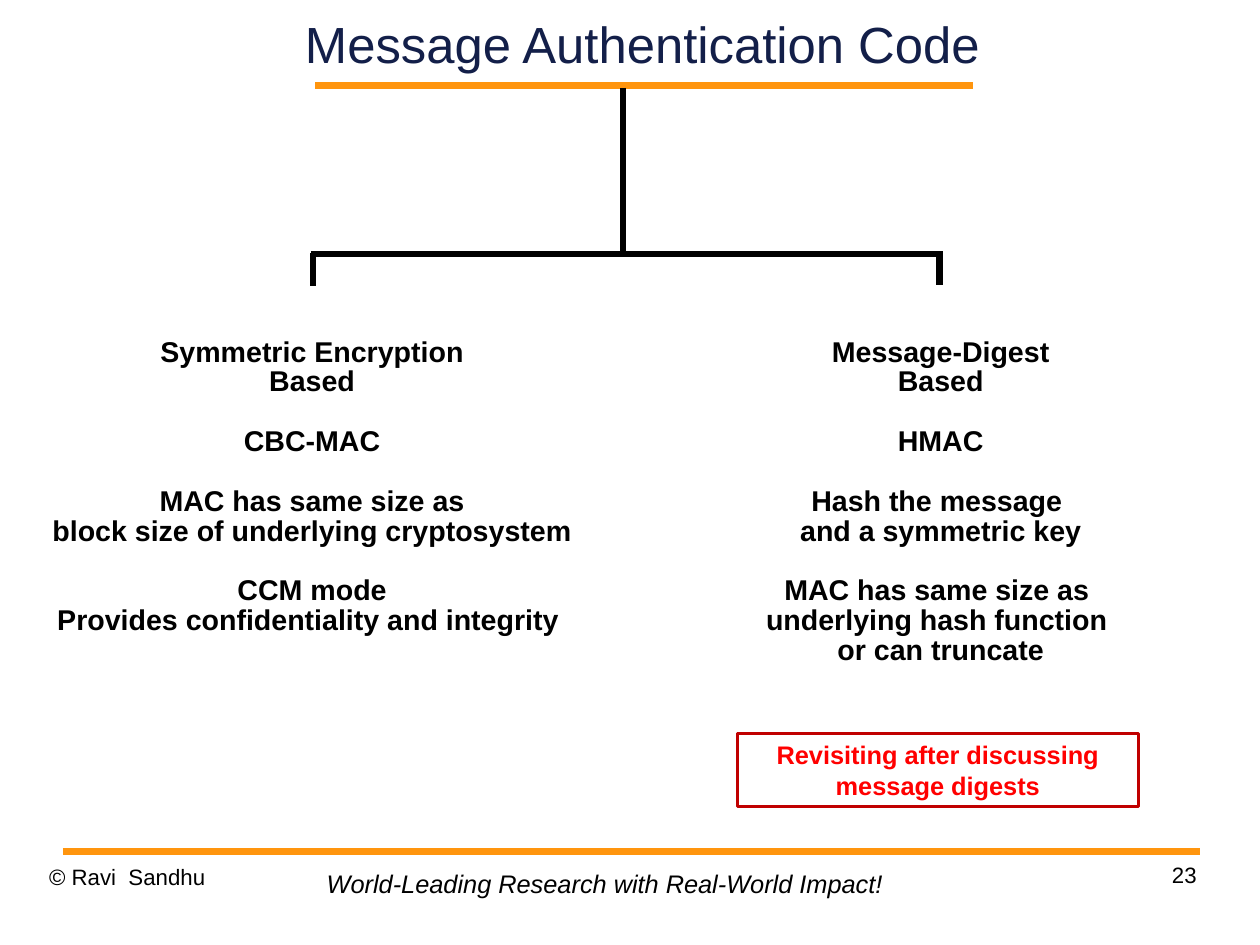
from lxml import etree
from pptx import Presentation
from pptx.dml.color import RGBColor
from pptx.enum.shapes import MSO_CONNECTOR, MSO_SHAPE
from pptx.enum.text import MSO_ANCHOR, MSO_AUTO_SIZE, PP_ALIGN
from pptx.oxml.ns import qn
from pptx.util import Cm, Inches, Pt

STRAIGHT = MSO_CONNECTOR.STRAIGHT
RECTANGLE = MSO_SHAPE.RECTANGLE
LEFT, CENTER, RIGHT = PP_ALIGN.LEFT, PP_ALIGN.CENTER, PP_ALIGN.RIGHT
TOP, MIDDLE = MSO_ANCHOR.TOP, MSO_ANCHOR.MIDDLE
GROW = MSO_AUTO_SIZE.SHAPE_TO_FIT_TEXT

FONT = "Arial"
COLORS = {
    "rule": "FF950E",
    "title": "131F49",
    "ink": "000000",
    "note": "FF0000",
    "note_border": "C00000",
}
BRANCH_SPACING = 0.87
BRANCH_GAP = 18.8

SYMMETRIC = [
    ["Symmetric Encryption", "Based"],
    ["CBC-MAC"],
    ["MAC has same size as", "block size of underlying cryptosystem"],
    ["CCM mode", "Provides confidentiality and integrity "],
]
DIGEST = [
    ["Message-Digest", "Based"],
    ["HMAC"],
    ["Hash the message ", "and a symmetric key"],
    ["MAC has same size as ", "underlying hash function ", "or can truncate"],
]


def color(name):
    return RGBColor.from_string(COLORS[name])


def draw_line(slide, start, end, ink, width):
    line = slide.shapes.add_connector(STRAIGHT, *map(Inches, start + end))
    line.line.color.rgb = color(ink)
    line.line.width = Pt(width)
    etree.SubElement(line._element.spPr, qn("a:effectLst"))


def format_frame(frame, inset=(0, 0), **settings):
    """Set the insets (sides, top and bottom) and other frame attributes."""
    across, down = map(Inches, inset)
    values = {"margin_left": across, "margin_right": across,
              "margin_top": down, "margin_bottom": down,
              "word_wrap": True, "vertical_anchor": TOP, **settings}
    for name, value in values.items():
        setattr(frame, name, value)


def write(paragraph, text, size, ink="ink", align=LEFT, spacing=None, **font):
    paragraph.text = text
    paragraph.alignment = align
    paragraph.line_spacing = spacing
    values = {"name": FONT, "size": Pt(size), **font}
    for name, value in values.items():
        setattr(paragraph.font, name, value)
    paragraph.font.color.rgb = color(ink)


def add_frame(slide, box, **settings):
    frame = slide.shapes.add_textbox(*map(Inches, box)).text_frame
    format_frame(frame, **settings)
    return frame


def add_title(slide, box, text):
    left, top, width, height = box
    rule_left, rule_y = left + 0.35, top + height
    draw_line(slide, (rule_left, rule_y), (rule_left + 5.75, rule_y), "rule", 4.31)
    frame = add_frame(slide, box, vertical_anchor=MIDDLE)
    write(frame.paragraphs[0], text, 32, "title", CENTER)


def add_footer(slide, box, owner, motto, number):
    left, top, width, height = box
    draw_line(slide, (left, top), (left + width, top), "rule", 4.31)
    corner_width = 2.57
    owner_frame = add_frame(slide, (left - 0.12, top + 0.1, corner_width, height))
    write(owner_frame.paragraphs[0], owner, 14, spacing=1.01)
    number_left = left + width - corner_width - 0.03
    number_frame = add_frame(slide, (number_left, top + 0.08, corner_width, height))
    write(number_frame.paragraphs[0], number, 14, align=RIGHT, spacing=1.01)
    motto_frame = add_frame(slide, (left + 2.21, top + 0.1, 5.08, 0.37),
                            inset=(0.1, 0.05), word_wrap=False, auto_size=GROW)
    write(motto_frame.paragraphs[0], motto, 16, italic=True)


def add_fork(slide, box):
    """Draw a trunk that splits into a left and a right branch."""
    left, top, width, height = box
    right, bottom = left + width, top + height
    split = bottom - 0.28
    trunk = left + 2.71
    for start, end in [
        ((trunk, top), (trunk, split)),
        ((left - 0.02, split), (right - 0.02, split)),
        ((left, split - 0.01), (left, bottom)),
        ((right, split - 0.02), (right, bottom - 0.01)),
    ]:
        draw_line(slide, start, end, "ink", 4)


def add_branch(slide, box, groups):
    frame = add_frame(slide, box, inset=(0.07, 0.03), word_wrap=False, auto_size=GROW)
    for group_index, group in enumerate(groups):
        for line_index, text in enumerate(group):
            first = group_index == line_index == 0
            paragraph = frame.paragraphs[0] if first else frame.add_paragraph()
            write(paragraph, text, 18, align=CENTER, spacing=BRANCH_SPACING, bold=True)
            if line_index == 0 and not first:
                paragraph.space_before = Pt(BRANCH_GAP)


def add_note(slide, box, text):
    note = slide.shapes.add_shape(RECTANGLE, *map(Inches, box))
    note.shadow.inherit = False
    note.fill.background()
    note.line.color.rgb = color("note_border")
    note.line.width = Pt(2)
    format_frame(note.text_frame, inset=(0.1, 0.05), auto_size=GROW)
    write(note.text_frame.paragraphs[0], text, 16, "note", CENTER, bold=True)


def main():
    presentation = Presentation()
    presentation.slide_width = Cm(28)
    presentation.slide_height = Cm(21)
    slide = presentation.slides.add_slide(presentation.slide_layouts[6])
    add_title(slide, (2.41, 0, 6.43, 0.75), "Message Authentication Code")
    add_footer(slide, (0.55, 7.45, 9.95, 0.57), "© Ravi  Sandhu",
               "World-Leading Research with Real-World Impact!", "23")
    add_fork(slide, (2.74, 0.77, 5.48, 1.73))
    add_branch(slide, (0.37, 2.93, 4.72, 2.69), SYMMETRIC)
    add_branch(slide, (6.62, 2.93, 3.22, 2.95), DIGEST)
    add_note(slide, (6.45, 6.42, 3.51, 0.64),
             "Revisiting after discussing message digests")
    presentation.save("out.pptx")


if __name__ == "__main__":
    main()
